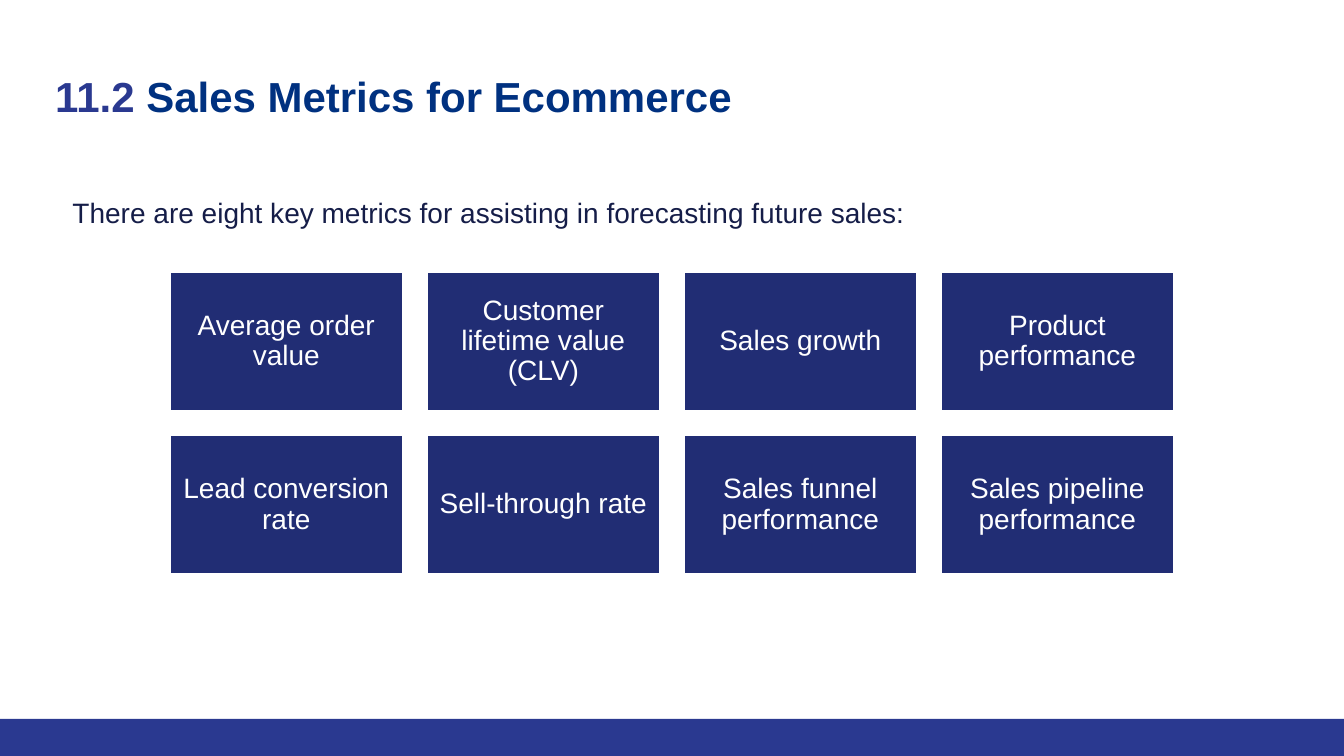
import dataclasses
import typing

import pptx
import pptx.dml.color
import pptx.enum.shapes
import pptx.enum.text
import pptx.util

Pt = pptx.util.Pt
Anchor = pptx.enum.text.MSO_ANCHOR
Align = pptx.enum.text.PP_ALIGN


@dataclasses.dataclass(frozen=True)
class Theme:
    font: str = "Arial"
    title_size: float = 30
    text_size: float = 20
    band: str = "2A3990"
    title: str = "003180"
    body: str = "151D48"
    card: str = "212D74"
    white: str = "FFFFFF"


@dataclasses.dataclass(frozen=True)
class Area:
    left: float
    top: float
    width: float
    height: float

    def lengths(self) -> list[int]:
        return [Pt(value) for value in (self.left, self.top, self.width, self.height)]


@dataclasses.dataclass(frozen=True)
class Span:
    text: str
    color: str


@dataclasses.dataclass(frozen=True)
class TextStyle:
    size: float
    bold: bool = False
    inset: float = 7.2
    left_inset: float = 7.2
    anchor: Anchor = Anchor.TOP
    align: Align = Align.LEFT
    line_spacing: float = 1.0


THEME = Theme()
PAGE = Area(0, 0, 960, 540)
BAND = Area(0, 513.5, 960, 26.5)
TITLE = Area(32.4, 43.2, 894.4, 64)
INTRO = Area(32.4, 128.9, 894.4, 42.5)
FIRST_CARD = Area(121, 193.9, 167, 100)
COLUMN_STEP, ROW_STEP, COLUMNS = 183.6, 116.7, 4
TITLE_STYLE = TextStyle(THEME.title_size, bold=True)
INTRO_STYLE = TextStyle(THEME.text_size, left_inset=19.4, line_spacing=1.15)
CARD_STYLE = TextStyle(THEME.text_size, inset=6, left_inset=6, anchor=Anchor.MIDDLE,
                       align=Align.CENTER, line_spacing=0.9)
METRICS = (
    "Average order value", "Customer lifetime value (CLV)",
    "Sales growth", "Product performance",
    "Lead conversion rate", "Sell-through rate",
    "Sales funnel performance", "Sales pipeline performance",
)


def rgb(value: str) -> pptx.dml.color.RGBColor:
    return pptx.dml.color.RGBColor.from_string(value)


def apply_format(target: typing.Any, values: dict[str, typing.Any]) -> None:
    for name, value in values.items():
        setattr(target, name, value)


def write_text(box: typing.Any, spans: typing.Sequence[Span], style: TextStyle) -> None:
    frame = box.text_frame
    apply_format(frame, {
        "word_wrap": True, "vertical_anchor": style.anchor,
        "margin_left": Pt(style.left_inset), "margin_right": Pt(style.inset),
        "margin_top": Pt(style.inset), "margin_bottom": Pt(style.inset),
    })
    para = frame.paragraphs[0]
    apply_format(para, {"alignment": style.align, "line_spacing": style.line_spacing})
    for span in spans:
        run = para.add_run()
        run.text = span.text
        apply_format(run.font, {"name": THEME.font, "size": Pt(style.size), "bold": style.bold})
        run.font.color.rgb = rgb(span.color)


def add_text(page: typing.Any, area: Area, spans: typing.Sequence[Span], style: TextStyle) -> None:
    write_text(page.shapes.add_textbox(*area.lengths()), spans, style)


def add_rectangle(page: typing.Any, area: Area, color: str) -> typing.Any:
    box = page.shapes.add_shape(pptx.enum.shapes.MSO_SHAPE.RECTANGLE, *area.lengths())
    box.shadow.inherit = False
    box.fill.solid()
    box.fill.fore_color.rgb = rgb(color)
    box.line.fill.background()
    return box


def add_card(page: typing.Any, index: int, metric: str) -> None:
    row, column = divmod(index, COLUMNS)
    area = dataclasses.replace(FIRST_CARD, left=FIRST_CARD.left + column * COLUMN_STEP,
                               top=FIRST_CARD.top + row * ROW_STEP)
    box = add_rectangle(page, area, THEME.card)
    box.line.color.rgb = rgb(THEME.white)
    box.line.width = Pt(2)
    write_text(box, [Span(metric, THEME.white)], CARD_STYLE)


def main() -> None:
    """Build the slide of eight ecommerce sales metrics."""
    deck = pptx.Presentation()
    apply_format(deck, {"slide_width": Pt(PAGE.width), "slide_height": Pt(PAGE.height)})
    page = deck.slides.add_slide(deck.slide_layouts[6])
    add_rectangle(page, BAND, THEME.band)
    add_text(page, TITLE, [Span("11.2 ", THEME.band),
                           Span("Sales Metrics for Ecommerce", THEME.title)], TITLE_STYLE)
    add_text(page, INTRO, [Span(
        "There are eight key metrics for assisting in forecasting future sales:", THEME.body,
    )], INTRO_STYLE)
    for index, metric in enumerate(METRICS):
        add_card(page, index, metric)
    deck.save("out.pptx")


if __name__ == "__main__":
    main()
